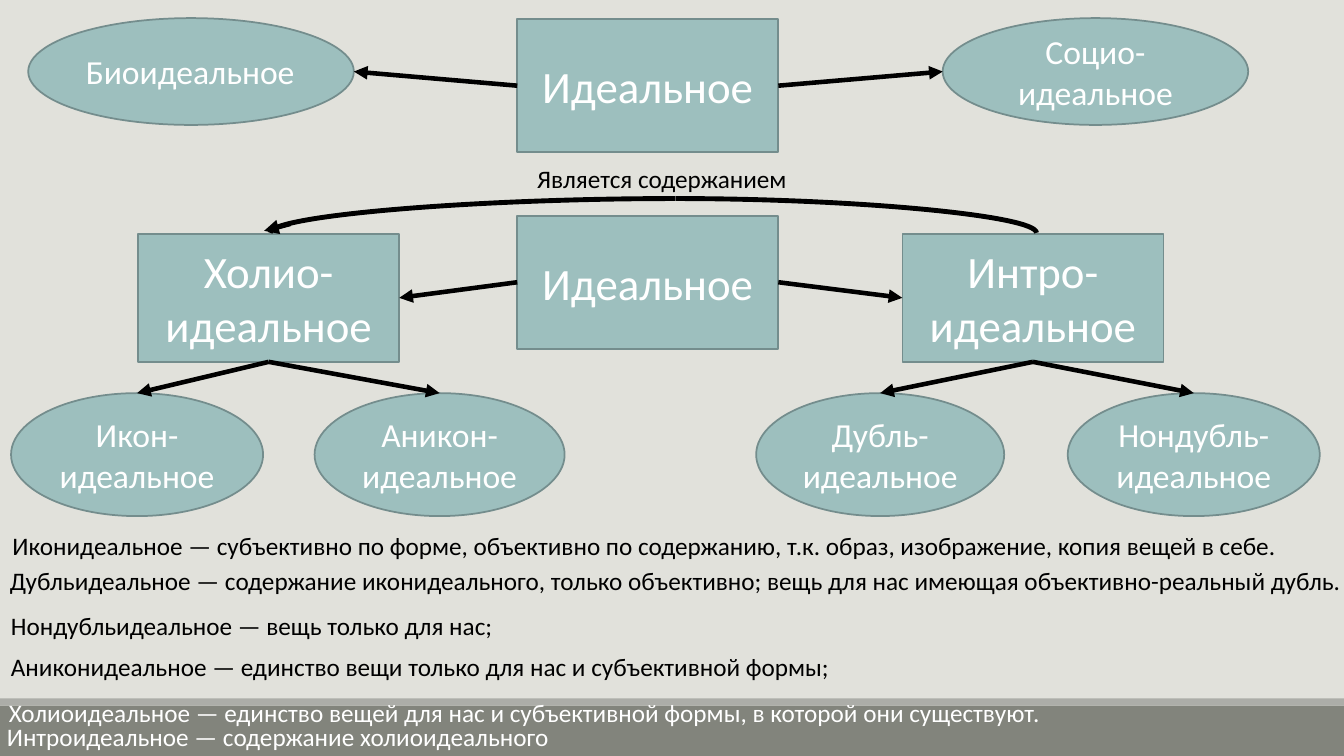
from dataclasses import dataclass

from lxml.etree import SubElement
from pptx import Presentation
from pptx.dml.color import RGBColor
from pptx.enum.shapes import MSO_CONNECTOR as Link, MSO_SHAPE as Shape
from pptx.enum.text import MSO_ANCHOR as Anchor, MSO_AUTO_SIZE as AutoSize, PP_ALIGN as Align
from pptx.oxml.ns import qn
from pptx.util import Inches, Pt


@dataclass(frozen=True)
class Theme:
    font: str = "Calibri"
    background: str = "E1E1DB"
    footer: str = "82847C"
    footer_edge: str = "ACADA8"
    node: str = "9DBFBE"
    node_edge: str = "748D8D"
    dark: str = "000000"
    light: str = "FFFFFF"
    concept_size: float = 32
    kind_size: float = 24
    note_size: float = 18
    edge_width: float = 1.25
    arrow_width: float = 3.25
    arc_width: float = 3.5


def rgb(value):
    return RGBColor.from_string(value)


def side(node, x, y):
    """Point on a node's frame, as fractions of its width and height."""
    return node.left + int(node.width * x), node.top + int(node.height * y)


class Diagram:
    def __init__(self, slide, theme):
        self.slide, self.theme = slide, theme
        slide.background.fill.solid()
        slide.background.fill.fore_color.rgb = rgb(theme.background)

    def label(self, frame, text, size, color, align):
        frame.text = text
        paragraph = frame.paragraphs[0]
        paragraph.alignment = align
        font = paragraph.runs[0].font
        font.name, font.size = self.theme.font, Pt(size)
        font.color.rgb = rgb(color)

    def block(self, kind, box, fill, edge=None):
        shape = self.slide.shapes.add_shape(kind, *map(Inches, box))
        shape.shadow.inherit = False
        shape.fill.solid()
        shape.fill.fore_color.rgb = rgb(fill)
        if edge:
            shape.line.color.rgb = rgb(edge)
            shape.line.width = Pt(self.theme.edge_width)
        else:
            shape.line.fill.background()
        return shape

    def node(self, kind, text, box, size, align=Align.CENTER):
        shape = self.block(kind, box, self.theme.node, self.theme.node_edge)
        shape.text_frame.word_wrap = True
        shape.text_frame.vertical_anchor = Anchor.MIDDLE
        self.label(shape.text_frame, text, size, self.theme.light, align)
        return shape

    def concept(self, text, left, top, height):
        return self.node(Shape.RECTANGLE, text, (left, top, 2.59, height), self.theme.concept_size)

    def kind(self, text, left, top, width, height, align=Align.CENTER):
        return self.node(Shape.OVAL, text, (left, top, width, height), self.theme.kind_size, align)

    def note(self, text, left, top, width, color, align=Align.LEFT, wrap=True):
        box = self.slide.shapes.add_textbox(*map(Inches, (left, top, width, 0.4)))
        box.text_frame.word_wrap = wrap
        box.text_frame.auto_size = AutoSize.SHAPE_TO_FIT_TEXT
        self.label(box.text_frame, text, self.theme.note_size, color, align)

    def line(self, start, end, width, kind=Link.STRAIGHT):
        link = self.slide.shapes.add_connector(kind, *start, *end)
        link.line.color.rgb = rgb(self.theme.dark)
        link.line.width = Pt(width)
        SubElement(link._element.spPr, qn("a:effectLst"))
        return link

    def arrow(self, start, end, width):
        link = self.line(start, end, width)
        SubElement(link._element.spPr.find(qn("a:ln")), qn("a:tailEnd"), type="triangle")

    def arc(self, start, end):
        """Quarter curve that leaves level and arrives upright."""
        link = self.line(start, end, self.theme.arc_width, Link.CURVE)
        link._element.spPr.find(qn("a:prstGeom")).set("prst", "curvedConnector2")


def main():
    theme = Theme()
    deck = Presentation()
    deck.slide_width, deck.slide_height = Inches(13.33), Inches(7.5)
    diagram = Diagram(deck.slides.add_slide(deck.slide_layouts[6]), theme)

    diagram.block(Shape.RECTANGLE, (0, 7, 13.33, 0.5), theme.footer)
    diagram.block(Shape.RECTANGLE, (0, 6.93, 13.33, 0.07), theme.footer_edge)

    ideal_by_bearer = diagram.concept("Идеальное", 5.13, 0.19, 1.32)
    bio = diagram.kind("Биоидеальное", 0.28, 0.18, 3.23, 1.06, Align.LEFT)
    socio = diagram.kind("Социо-идеальное", 9.35, 0.18, 3.03, 1.06)

    ideal_by_content = diagram.concept("Идеальное", 5.13, 2.14, 1.32)
    holio = diagram.concept("Холио-идеальное", 1.37, 2.32, 1.27)
    intro = diagram.concept("Интро-идеальное", 8.95, 2.32, 1.27)

    for ideal, left, right in ((ideal_by_bearer, bio, socio), (ideal_by_content, holio, intro)):
        diagram.arrow(side(ideal, 0, 0.5), side(left, 1, 0.5), theme.arrow_width)
        diagram.arrow(side(ideal, 1, 0.5), side(right, 0, 0.5), theme.arrow_width)

    for parent, text, left, width in (
        (holio, "Икон-идеальное", 0.11, 2.5),
        (holio, "Аникон-идеальное", 3.12, 2.48),
        (intro, "Дубль-идеальное", 7.5, 2.46),
        (intro, "Нондубль-идеальное", 10.59, 2.5),
    ):
        child = diagram.kind(text, left, 3.9, width, 1.22)
        diagram.arrow(side(parent, 0.5, 1), side(child, 0.5, 0), theme.arrow_width)

    arc_top = Inches(6.7), Inches(1.97)
    for arc_end in (2.68, 10.28):
        diagram.arc(arc_top, (Inches(arc_end), Inches(2.31)))
    diagram.arrow((Inches(2.88), Inches(2.22)), (Inches(2.62), Inches(2.29)), theme.arc_width)
    diagram.note("Является содержанием", 5.23, 1.57, 6.67, theme.dark)

    diagram.note("Иконидеальное — субъективно по форме, объективно по содержанию, т.к. образ, "
                 "изображение, копия вещей в себе.", -0.15, 5.21, 13.08, theme.dark, Align.CENTER)
    diagram.note("Дубльидеальное — содержание иконидеального, только объективно; вещь для нас "
                 "имеющая объективно-реальный дубль.", 0, 5.56, 13.97, theme.dark)
    diagram.note("Нондубльидеальное — вещь только для нас;", 0.01, 6.01, 5.14, theme.dark, wrap=False)
    diagram.note("Аниконидеальное — единство вещи только для нас и субъективной формы;",
                 0.01, 6.41, 8.46, theme.dark, wrap=False)
    diagram.note("Холиоидеальное — единство вещей для нас и субъективной формы, в которой "
                 "они существуют.", -0.01, 6.87, 12.84, theme.light)
    diagram.note("Интроидеальное — содержание холиоидеального", -0.03, 7.11, 5.63, theme.light, wrap=False)

    deck.save("out.pptx")


if __name__ == "__main__":
    main()
